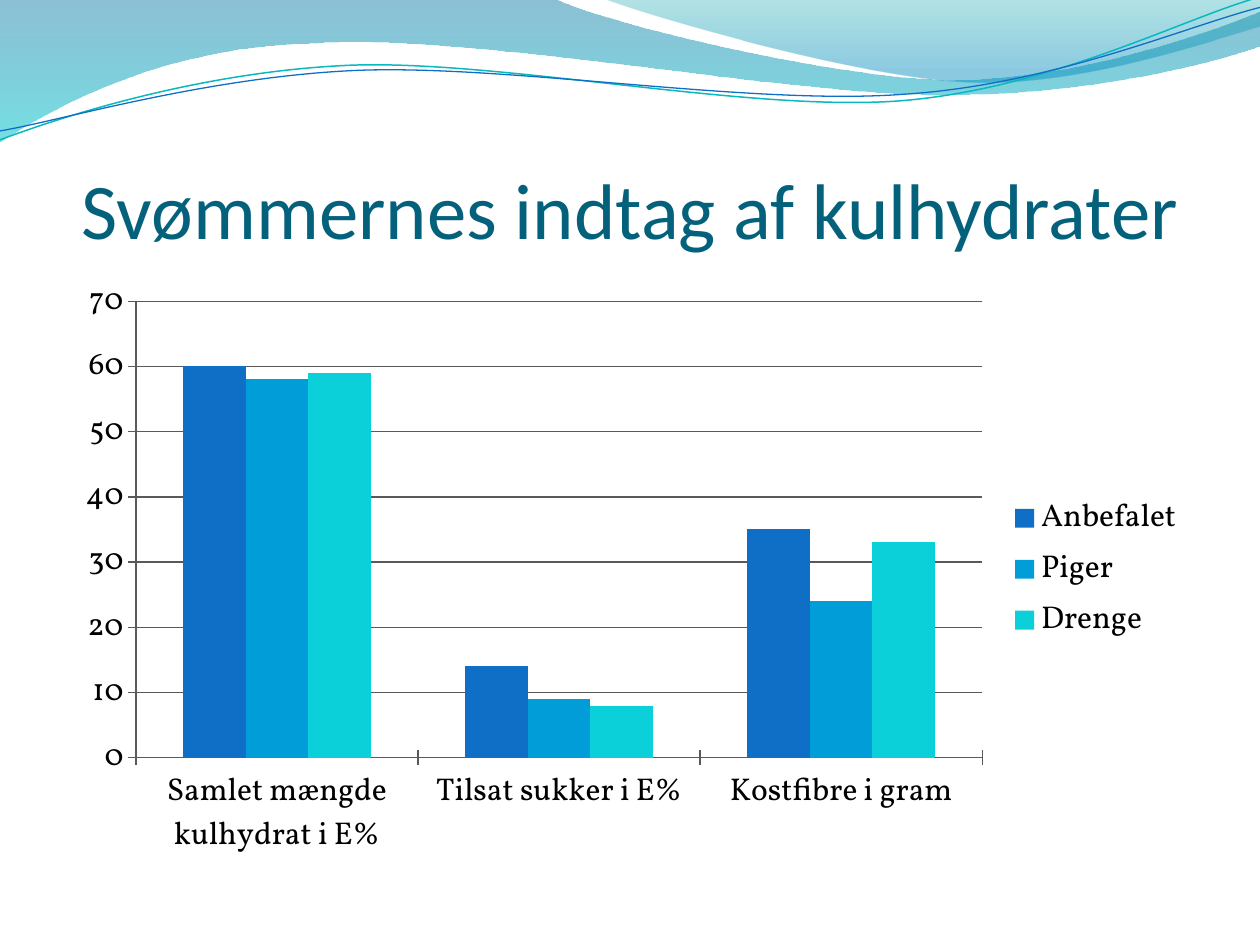
from lxml import etree
from pptx import Presentation
from pptx.chart.data import CategoryChartData
from pptx.dml.color import RGBColor
from pptx.enum.chart import XL_CHART_TYPE, XL_LEGEND_POSITION, XL_TICK_MARK
from pptx.enum.text import MSO_ANCHOR, PP_ALIGN
from pptx.oxml.ns import qn
from pptx.util import Cm, Pt

COLUMN = XL_CHART_TYPE.COLUMN_CLUSTERED
RIGHT = XL_LEGEND_POSITION.RIGHT
CROSS = XL_TICK_MARK.CROSS
BOTTOM = MSO_ANCHOR.BOTTOM
CENTER = PP_ALIGN.CENTER

TITLE = RGBColor(0x04, 0x61, 0x7B)
BLUE = RGBColor(0x0F, 0x6F, 0xC6)
SKY = RGBColor(0x00, 0x9D, 0xD9)
AQUA = RGBColor(0x0B, 0xD0, 0xD9)
TEAL = RGBColor(0x0A, 0xB8, 0xBF)
DEEP = RGBColor(0x00, 0x74, 0xA1)
CYAN = RGBColor(0x00, 0xC6, 0xCF)
SEA = RGBColor(0x00, 0xA1, 0xA9)
OCEAN = RGBColor(0x00, 0x8B, 0xBF)
GRAY = RGBColor(0x59, 0x59, 0x59)
BLACK = RGBColor(0, 0, 0)

prs = Presentation()
prs.slide_width, prs.slide_height = Cm(25.4), Cm(19.05)
slide = prs.slides.add_slide(prs.slide_layouts[5])
shapes = slide.shapes


def add_wave(start, parts, close):
    """Draw an outline in cm; a part has 2 numbers (line) or 6 (Bézier curve)."""
    draft = shapes.build_freeform(Cm(start[0]), Cm(start[1]))
    for part in parts:
        pairs = zip(part[::2], part[1::2])
        draft.add_line_segments([(Cm(x), Cm(y)) for x, y in pairs], close=False)
    if close:
        draft.add_line_segments([], close=True)
    wave = draft.convert_to_shape()
    wave.shadow.inherit = False
    # Join each three segments of a curve into one Bézier segment
    legs = iter(list(wave._element.spPr.iter(qn("a:lnTo"))))
    for part in parts:
        leg = next(legs)
        if len(part) == 6:
            leg.tag = qn("a:cubicBezTo")
            for rest in (next(legs), next(legs)):
                leg.append(rest[0])
                rest.getparent().remove(rest)
    return wave


# Filled waves: start, parts, then colour, position and opacity of each stop
bands = [
    ((0, 0),
     [(11.18, -0.03),
      (12.09, 0.43, 16.87, 1.6, 19.25, 1.6),
      (21.67, 1.6, 24.33, 0.66, 25.4, 0.23),
      (25.43, 0.91),
      (24.97, 1.12, 22.1, 1.93, 18.95, 1.91),
      (15.8, 1.91, 9.7, 0.71, 6.53, 0.86),
      (3.28, 0.91, 1.17, 2.11, -0.03, 2.87),
      (0, 0)],
     [(DEEP, 0, 45), (CYAN, 1, 55)]),
    ((12.17, -0.03),
     [(12.93, 0.28, 17.32, 1.57, 19.53, 1.65),
      (21.74, 1.75, 24.41, 0.81, 25.4, 0.53),
      (25.4, 0),
      (12.17, -0.03)],
     [(SEA, 0, 30), (OCEAN, 0.8, 45)]),
]
for start, parts, stops in bands:
    band = add_wave(start, parts, True)
    band.line.fill.background()
    band.fill.gradient()
    band.fill.gradient_angle = 270
    for stop, (color, place, alpha) in zip(band.fill.gradient_stops, stops):
        stop.color.rgb = color
        stop.position = place
    tints = band._element.spPr.iter(qn("a:srgbClr"))
    for tint, (color, place, alpha) in zip(tints, stops):
        etree.SubElement(tint, qn("a:alpha"), val=str(alpha * 1000))

# Thin wave lines, slightly turned and grouped
lines = [
    ((-0.05, 2.22),
     [(1.19, 1.82, 4.02, 1.04, 7.05, 1.05),
      (10.05, 1.07, 15.02, 2.37, 18.08, 2.29),
      (21.13, 2.2, 23.86, 0.91, 25.41, 0.55)], TEAL, 0.85),
    ((-0.04, 2.04),
     [(1.16, 1.9, 4.17, 1.15, 7.2, 1.16),
      (10.25, 1.18, 15.13, 2.25, 18.19, 2.16),
      (21.21, 2.11, 23.93, 1.06, 25.45, 0.75)], BLUE, 0.75),
]
curves = []
for start, parts, color, width in lines:
    curve = add_wave(start, parts, False)
    curve.rotation = 357.3
    curve.fill.background()
    curve.line.color.rgb = color
    curve.line.width = Pt(width)
    curves.append(curve)
shapes.add_group_shape(curves)

# Title, in front of the waves
title = shapes.title
shapes._spTree.append(title._element)
title.left, title.top = Cm(1.27), Cm(1.96)
title.width, title.height = Cm(22.86), Cm(3.18)
frame = title.text_frame
frame.text = "Svømmernes indtag af kulhydrater"
frame.vertical_anchor = BOTTOM
frame.margin_left = frame.margin_right = frame.margin_bottom = 0
frame.margin_top = Cm(0.13)
para = frame.paragraphs[0]
para.alignment = CENTER
font = para.runs[0].font
font.name, font.size, font.color.rgb = "Calibri", Pt(45), TITLE

# Chart
data = CategoryChartData()
data.categories = ["Samlet mængde kulhydrat i E%", "Tilsat sukker i E%",
                   "Kostfibre i gram"]
data.add_series("Anbefalet", (60, 14, 35))
data.add_series("Piger", (58, 9, 24))
data.add_series("Drenge", (59, 8, 33))
chart = shapes.add_chart(COLUMN, Cm(1.27), Cm(5.38), Cm(22.86), Cm(12.19),
                         data).chart
chart.has_title = False
chart.font.name, chart.font.size = "Vollkorn", Pt(18)
chart.font.color.rgb = BLACK
chart.has_legend = True
chart.legend.position = RIGHT
chart.legend.include_in_layout = False

# Columns
plot = chart.plots[0]
plot.gap_width, plot.overlap = 150, 0
plot.vary_by_categories = False
for series, color in zip(plot.series, (BLUE, SKY, AQUA)):
    series.format.fill.solid()
    series.format.fill.fore_color.rgb = color

# Axes
scale = chart.value_axis
scale.minimum_scale, scale.maximum_scale, scale.major_unit = 0, 70, 10
scale.has_major_gridlines = True
for axis in (scale, chart.category_axis):
    axis.major_tick_mark = CROSS
    axis.format.line.color.rgb = GRAY
scale.major_gridlines.format.line.color.rgb = GRAY

prs.save("out.pptx")
